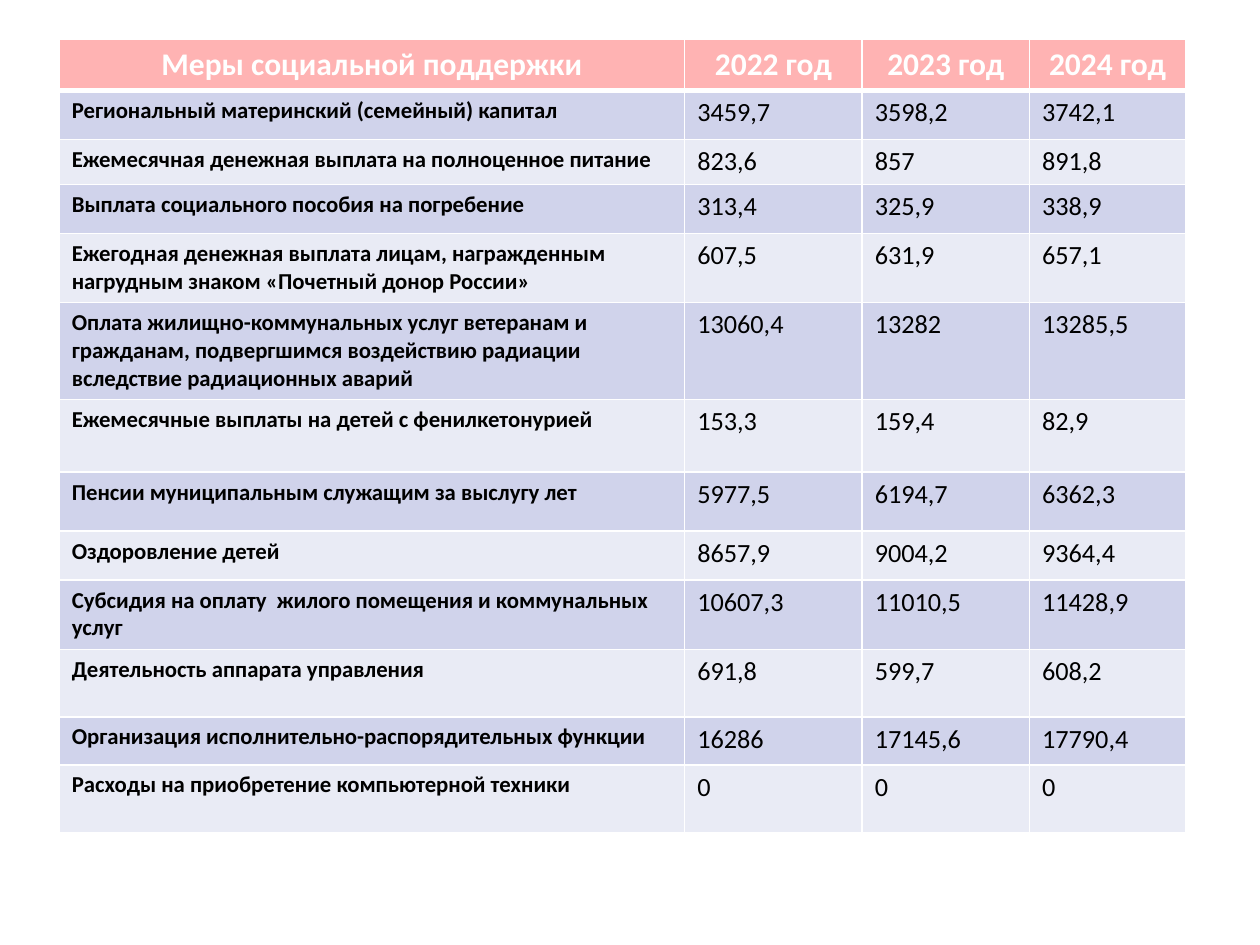
from dataclasses import dataclass

from lxml import etree
from pptx import Presentation
from pptx.dml.color import RGBColor
from pptx.enum.text import PP_ALIGN
from pptx.oxml.ns import qn
from pptx.util import Inches, Pt

CENTER, LEFT = PP_ALIGN.CENTER, PP_ALIGN.LEFT
BLANK_LAYOUT = 6


@dataclass(frozen=True)
class Theme:
    """Colours, font and type sizes of the slide."""
    font: str = "Calibri"
    header_fill: str = "FFB3B3"
    band_fills: tuple = ("D0D3EB", "E9EBF5")
    header_text: str = "FFFFFF"
    body_text: str = "000000"
    border: str = "FFFFFF"
    header_size: float = 18
    label_size: float = 13
    value_size: float = 15
    thin_line: float = 1
    thick_line: float = 3


THEME = Theme()
HEADER = ("Меры социальной поддержки", "2022 год", "2023 год", "2024 год")
MEASURES = (
    ("Региональный материнский (семейный) капитал", "3459,7", "3598,2", "3742,1"),
    ("Ежемесячная денежная выплата на полноценное питание", "823,6", "857", "891,8"),
    ("Выплата социального пособия на погребение", "313,4", "325,9", "338,9"),
    ("Ежегодная денежная выплата лицам, награжденным нагрудным знаком "
     "«Почетный донор России»", "607,5", "631,9", "657,1"),
    ("Оплата жилищно-коммунальных услуг ветеранам и гражданам, подвергшимся "
     "воздействию радиации вследствие радиационных аварий",
     "13060,4", "13282", "13285,5"),
    ("Ежемесячные выплаты на детей с фенилкетонурией", "153,3", "159,4", "82,9"),
    ("Пенсии муниципальным служащим за выслугу лет", "5977,5", "6194,7", "6362,3"),
    ("Оздоровление детей", "8657,9", "9004,2", "9364,4"),
    ("Субсидия на оплату  жилого помещения и коммунальных услуг",
     "10607,3", "11010,5", "11428,9"),
    ("Деятельность аппарата управления", "691,8", "599,7", "608,2"),
    ("Организация исполнительно-распорядительных функции",
     "16286", "17145,6", "17790,4"),
    ("Расходы на приобретение компьютерной техники", "0", "0", "0"),
)
COLUMN_WIDTHS = (4.97, 1.41, 1.33, 1.24)
ROW_HEIGHTS = (0.41, 0.39, 0.36, 0.39, 0.55, 0.77, 0.58, 0.47, 0.39, 0.55,
               0.54, 0.38, 0.54)


def set_borders(cell, top, bottom):
    """Draw the four cell borders, with the given top and bottom widths."""
    properties = cell._tc.get_or_add_tcPr()
    widths = {"a:lnL": THEME.thin_line, "a:lnR": THEME.thin_line,
              "a:lnT": top, "a:lnB": bottom}
    for position, (tag, width) in enumerate(widths.items()):
        line = etree.Element(qn(tag), w=str(Pt(width)))
        fill = etree.SubElement(line, qn("a:solidFill"))
        etree.SubElement(fill, qn("a:srgbClr"), val=THEME.border)
        properties.insert(position, line)


def style_cell(cell, text, fill, color, size, bold, alignment):
    """Fill a cell and set its text."""
    cell.text = text
    cell.fill.solid()
    cell.fill.fore_color.rgb = RGBColor.from_string(fill)
    paragraph = cell.text_frame.paragraphs[0]
    paragraph.alignment = alignment
    paragraph.font.name = THEME.font
    paragraph.font.size = Pt(size)
    paragraph.font.bold = bold
    paragraph.font.color.rgb = RGBColor.from_string(color)


def add_header(table):
    """Write the heading row."""
    for cell, text in zip(table.rows[0].cells, HEADER):
        style_cell(cell, text, THEME.header_fill, THEME.header_text,
                   THEME.header_size, True, CENTER)
        set_borders(cell, THEME.thin_line, THEME.thick_line)


def add_measures(table):
    """Write the banded rows of measures and yearly amounts."""
    for row_index, measure in enumerate(MEASURES, start=1):
        fill = THEME.band_fills[(row_index - 1) % 2]
        top = THEME.thick_line if row_index == 1 else THEME.thin_line
        for column_index, text in enumerate(measure):
            is_label = column_index == 0
            size = THEME.label_size if is_label else THEME.value_size
            cell = table.cell(row_index, column_index)
            style_cell(cell, text, fill, THEME.body_text, size, is_label, LEFT)
            set_borders(cell, top, THEME.thin_line)


def add_support_table(slide, left, top, width, height):
    """Place the table of social support measures in the given box."""
    table = slide.shapes.add_table(len(ROW_HEIGHTS), len(COLUMN_WIDTHS),
                                   left, top, width, height).table
    for column, share in zip(table.columns, COLUMN_WIDTHS):
        column.width = int(width * share / sum(COLUMN_WIDTHS))
    for row, share in zip(table.rows, ROW_HEIGHTS):
        row.height = int(height * share / sum(ROW_HEIGHTS))
    add_header(table)
    add_measures(table)


def main():
    """Build and save the presentation."""
    presentation = Presentation()
    presentation.slide_width = Inches(10)
    presentation.slide_height = Inches(7.5)
    slide = presentation.slides.add_slide(presentation.slide_layouts[BLANK_LAYOUT])
    add_support_table(slide, Inches(0.47), Inches(0.31), Inches(8.94), Inches(6.3))
    presentation.save("out.pptx")


if __name__ == "__main__":
    main()
